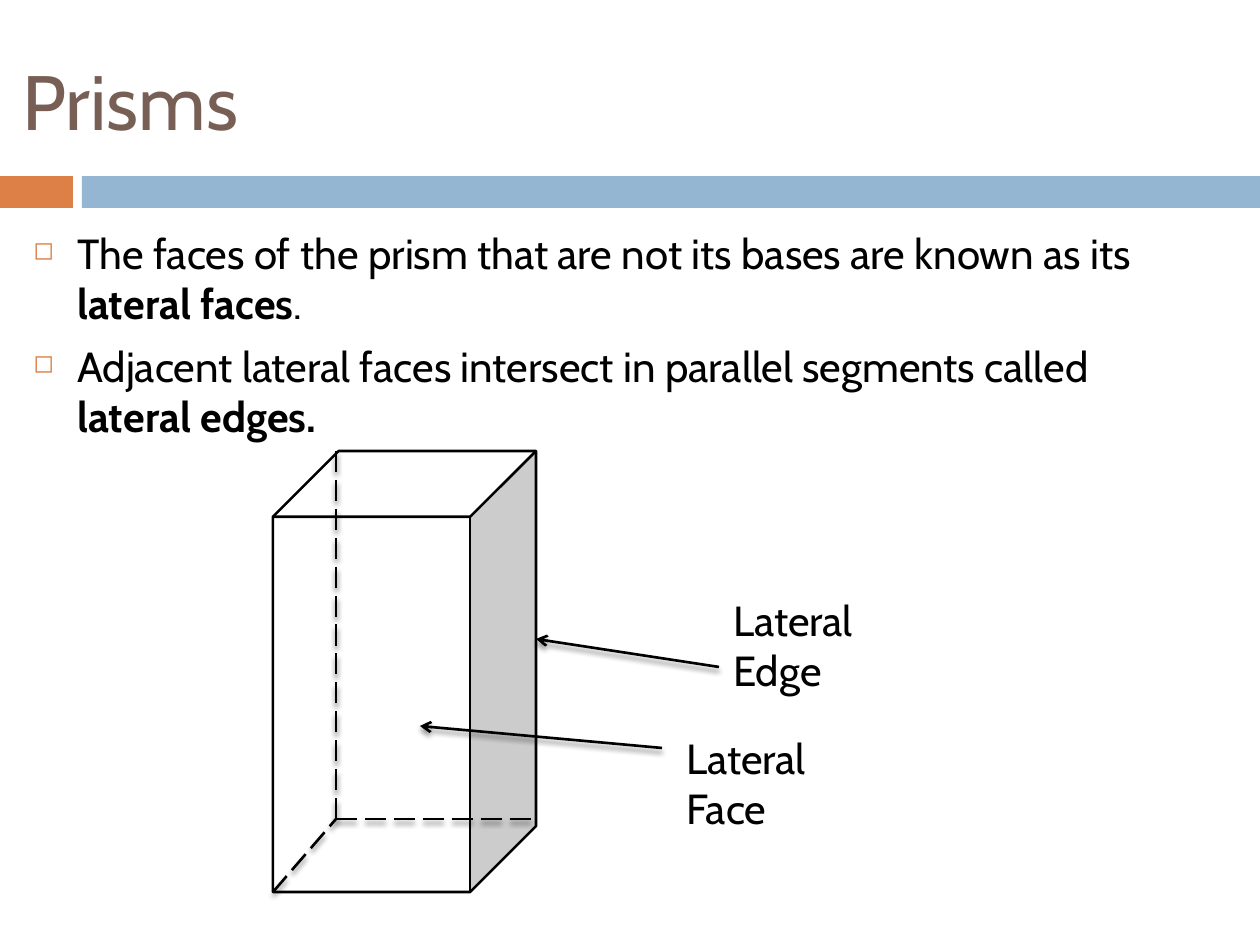
import lxml.etree
import pptx
import pptx.dml.color
import pptx.enum.dml
import pptx.enum.shapes
import pptx.enum.text
import pptx.oxml
import pptx.oxml.ns
import pptx.util

PX = 914400 / 126
FONT = "Cabin"
SHAPE = pptx.enum.shapes.MSO_SHAPE

prs = pptx.Presentation()
prs.slide_width = round(1260 * PX)
prs.slide_height = round(945 * PX)
s = prs.slides.add_slide(prs.slide_layouts[6])


def rgb(value):
    return pptx.dml.color.RGBColor.from_string(value)


def add_text(paragraphs, box, size=24, color="000000", anchor="TOP", bullet=None):
    sp = s.shapes.add_textbox(*[round(v * PX) for v in box])
    tf = sp.text_frame
    tf.word_wrap = True
    tf.vertical_anchor = pptx.enum.text.MSO_ANCHOR[anchor]
    for i, runs in enumerate(paragraphs):
        p = tf.add_paragraph() if i else tf.paragraphs[0]
        for text, bold in runs:
            r = p.add_run()
            r.text = text
            r.font.name = FONT
            r.font.size = pptx.util.Pt(size)
            r.font.bold = bold
            r.font.color.rgb = rgb(color)
        if bullet:
            p.space_before = pptx.util.Pt(7)
            pPr = p._p.get_or_add_pPr()
            pPr.set("marL", str(round(44 * PX)))
            pPr.set("indent", str(round(-44 * PX)))
            clr = lxml.etree.SubElement(pPr, pptx.oxml.ns.qn("a:buClr"))
            lxml.etree.SubElement(clr, pptx.oxml.ns.qn("a:srgbClr"), val=bullet)
            lxml.etree.SubElement(pPr, pptx.oxml.ns.qn("a:buSzPct"), val="60000")
            lxml.etree.SubElement(pPr, pptx.oxml.ns.qn("a:buChar"), char="◻")


for left, width, color in [(0, 73, "DD8047"), (82, 1178, "94B6D2")]:
    sp = s.shapes.add_shape(SHAPE.RECTANGLE, *[round(v * PX) for v in (left, 176, width, 32)])
    sp.shadow.inherit = False
    sp.fill.solid()
    sp.fill.fore_color.rgb = rgb(color)
    sp.line.fill.background()

sp = s.shapes.add_shape(SHAPE.CUBE, *[round(v * PX) for v in (273, 451, 263, 441)])
sp.shadow.inherit = False
sp.fill.solid()
sp.fill.fore_color.rgb = rgb("FFFFFF")
sp.line.color.rgb = rgb("000000")
sp.line.width = pptx.util.Pt(1.5)

SHADOW = (
    '<a:effectLst xmlns:a="http://schemas.openxmlformats.org/drawingml/2006/main">'
    '<a:outerShdw blurRad="38100" dist="30480" dir="5400000" rotWithShape="0">'
    '<a:srgbClr val="000000"><a:alpha val="45000"/></a:srgbClr>'
    "</a:outerShdw></a:effectLst>"
)
hidden_edges = [(273, 892, 336, 819), (336, 819, 536, 819), (336, 451, 336, 819)]
pointers = [(662, 748, 420, 726), (719, 667, 536, 639)]
for points in hidden_edges + pointers:
    line = s.shapes.add_connector(
        pptx.enum.shapes.MSO_CONNECTOR.STRAIGHT, *[round(v * PX) for v in points])
    line.line.color.rgb = rgb("000000")
    line.line.width = pptx.util.Pt(1.5)
    if points in hidden_edges:
        line.line.dash_style = pptx.enum.dml.MSO_LINE.LONG_DASH
    else:
        ln = line.line._get_or_add_ln()
        lxml.etree.SubElement(ln, pptx.oxml.ns.qn("a:tailEnd"), type="arrow")
    line._element.spPr.append(pptx.oxml.parse_xml(SHADOW))

add_text([[("Prisms", False)]], (10, 32, 1197, 136), size=44, color="775F55", anchor="MIDDLE")
add_text([
    [("The faces of the prism that are not its bases are known as its ", False),
     ("lateral faces", True), (".", False)],
    [("Adjacent lateral faces intersect in parallel segments called ", False),
     ("lateral edges.", True)],
], (21, 221, 1187, 284), bullet="DD8047")
add_text([[("Lateral Face", False)]], (674, 726, 179, 115))
add_text([[("Lateral Edge", False)]], (721, 588, 179, 115))

prs.save("out.pptx")
